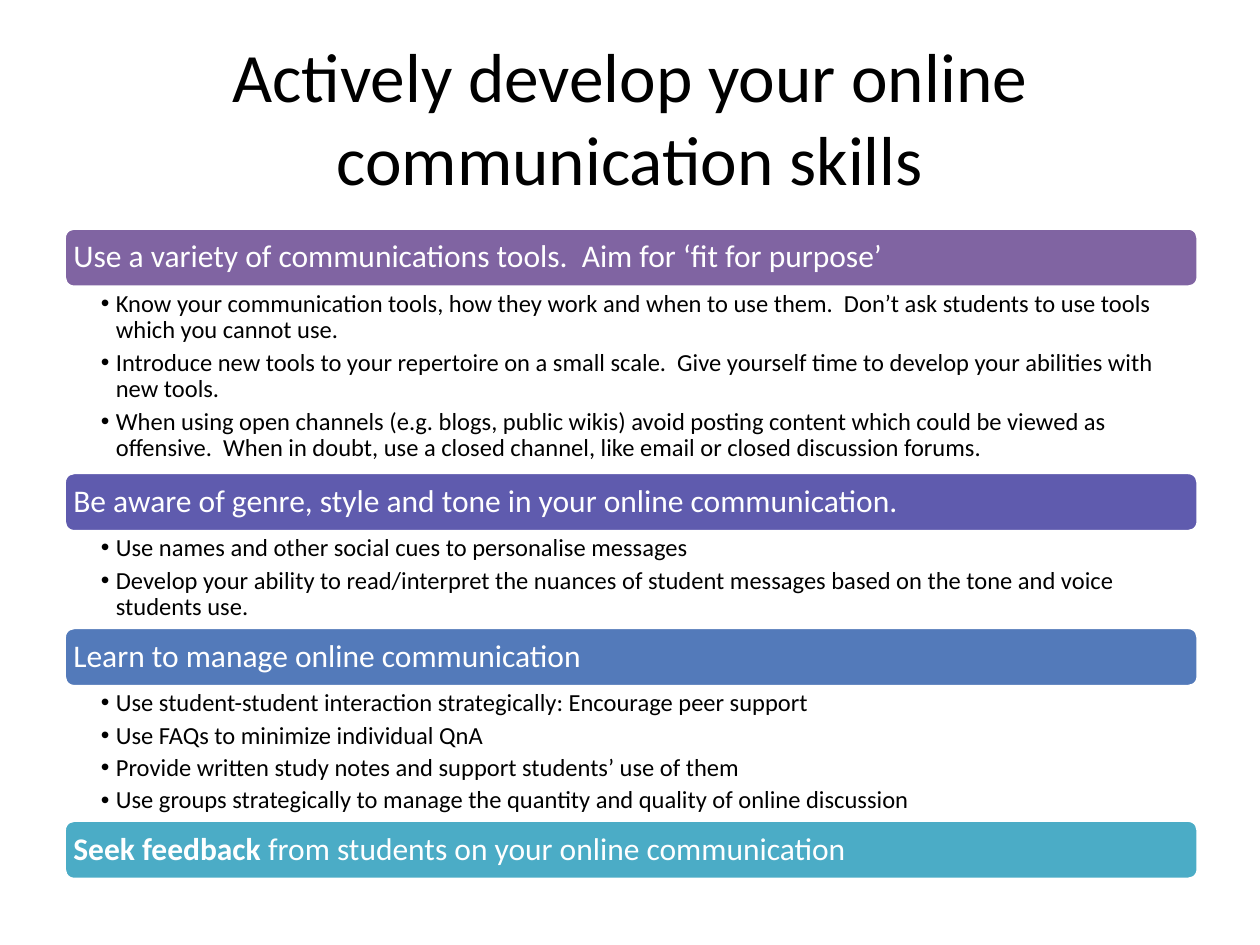
"""Build a slide of advice on online communication, with coloured banners over bullet lists."""
from lxml.etree import SubElement
from pptx import Presentation
from pptx.dml.color import RGBColor
from pptx.enum.shapes import MSO_SHAPE as Shape
from pptx.enum.text import MSO_ANCHOR as Anchor, PP_ALIGN as Align
from pptx.oxml.ns import qn
from pptx.util import Inches, Pt


def color(hex_string):
    return RGBColor.from_string(hex_string)


def write_text(shape, paragraphs, size, fill="000000", align=Align.LEFT, anchor=Anchor.MIDDLE,
               margins=(0.1, 0.05, 0.1, 0.05), spacing=1, after=0, bullet=False):
    frame = shape.text_frame
    frame.word_wrap = True
    frame.vertical_anchor = anchor
    frame.margin_left, frame.margin_top, frame.margin_right, frame.margin_bottom = map(Inches, margins)
    for index, runs in enumerate(paragraphs):
        paragraph = frame.add_paragraph() if index else frame.paragraphs[0]
        paragraph.alignment = align
        paragraph.line_spacing = spacing
        paragraph.space_after = Pt(after)
        if bullet:
            properties = paragraph._p.get_or_add_pPr()
            properties.set("marL", str(Inches(0.12)))
            properties.set("indent", str(-Inches(0.12)))
            SubElement(properties, qn("a:buFont"), typeface="Arial")
            SubElement(properties, qn("a:buChar"), char="•")
        for text, bold in runs:
            run = paragraph.add_run()
            run.text = text
            run.font.name = "Calibri"
            run.font.size = Pt(size)
            run.font.bold = bold
            run.font.color.rgb = color(fill)


sections = [
    ("8064A2", [("Use a variety of communications tools.  Aim for ‘fit for purpose’", False)], 19.6, [
        "Know your communication tools, how they work and when to use them.  "
        "Don’t ask students to use tools which you cannot use.",
        "Introduce new tools to your repertoire on a small scale.  "
        "Give yourself time to develop your abilities with new tools.",
        "When using open channels (e.g. blogs, public wikis) avoid posting content which could be "
        "viewed as offensive.  When in doubt, use a closed channel, like email or closed discussion forums.",
    ]),
    ("5F5BAE", [("Be aware of genre, style and tone in your online communication.", False)], 10.13, [
        "Use names and other social cues to personalise messages",
        "Develop your ability to read/interpret the nuances of student messages "
        "based on the tone and voice students use.",
    ]),
    ("537ABA", [("Learn to manage online communication", False)], 14.13, [
        "Use student-student interaction strategically: Encourage peer support",
        "Use FAQs to minimize individual QnA",
        "Provide written study notes and support students’ use of them",
        "Use groups strategically to manage the quantity and quality of online discussion",
    ]),
    ("4BACC6", [("Seek feedback ", True), ("from students on your online communication", False)], 0, []),
]

presentation = Presentation()
presentation.slide_width, presentation.slide_height = Inches(10), Inches(7.5)
column, row = presentation.slide_width / 100, presentation.slide_height / 100
slide = presentation.slides.add_slide(presentation.slide_layouts[6])

title = slide.shapes.add_textbox(int(5 * column), int(4 * row), int(90 * column), int(16.67 * row))
write_text(title, [[("Actively develop your online communication skills", False)]], 39.6, align=Align.CENTER)

left, width = int(5.1 * column), int(90 * column)
banner_rows = 6.27
top = 24.13
for fill, heading, list_rows, bullets in sections:
    banner = slide.shapes.add_shape(Shape.ROUNDED_RECTANGLE, left, int(top * row), width, int(banner_rows * row))
    banner.shadow.inherit = False
    banner.fill.solid()
    banner.fill.fore_color.rgb = color(fill)
    banner.line.color.rgb = color("FFFFFF")
    banner.line.width = Pt(2)
    write_text(banner, [heading], 18, fill="FFFFFF", margins=(0.05,) * 4, spacing=0.9)
    top += banner_rows
    if bullets:
        body = slide.shapes.add_textbox(left, int(top * row), width, int(list_rows * row))
        write_text(body, [[(bullet, False)] for bullet in bullets], 14, anchor=Anchor.TOP,
                   margins=(0.29, 0.03, 0.14, 0.03), spacing=0.9, after=3.4, bullet=True)
    top += list_rows

presentation.save("out.pptx")
